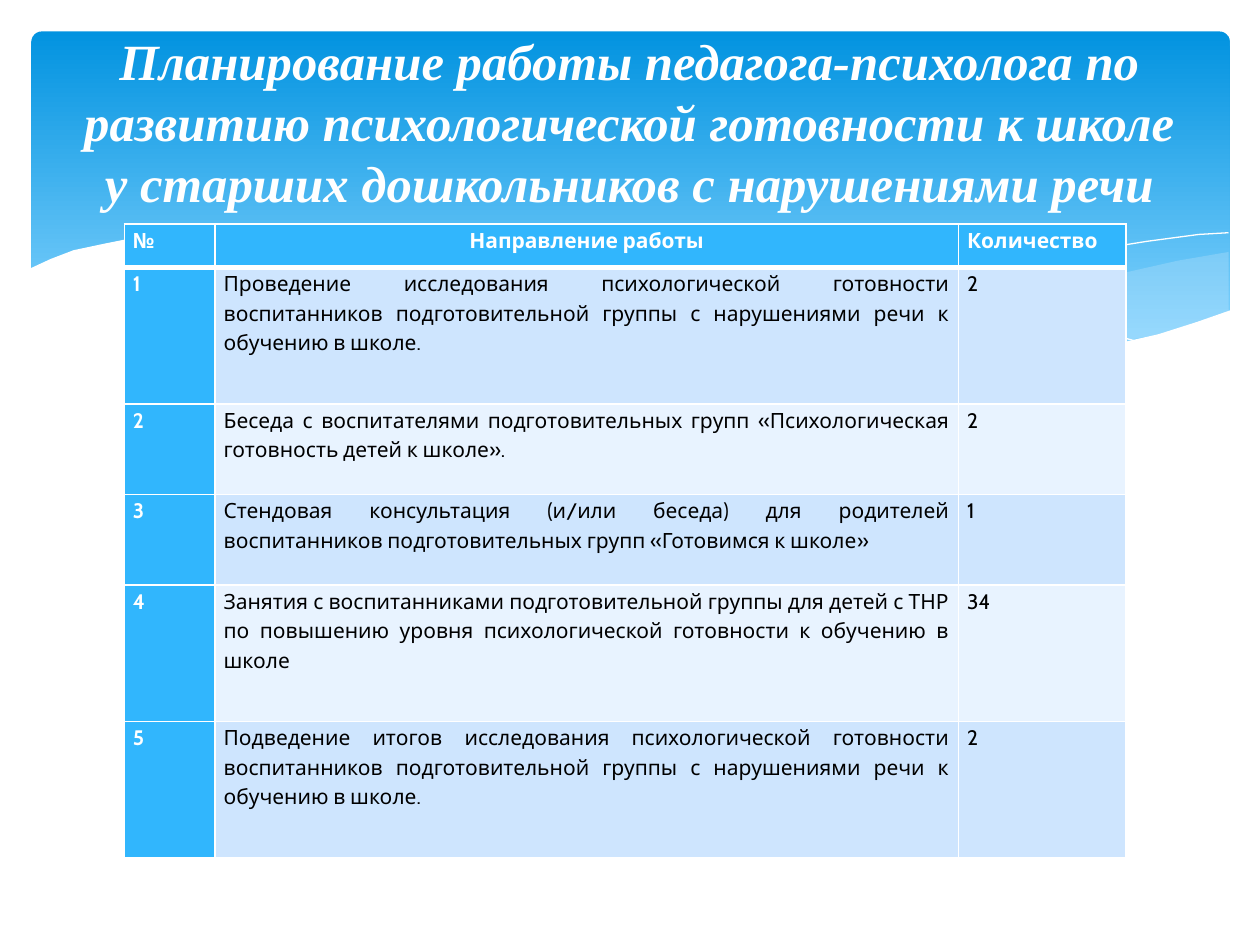
import pptx
import pptx.dml.color
import pptx.enum.shapes
import pptx.enum.text
import pptx.oxml
import pptx.oxml.ns
import pptx.util
from lxml import etree

Pt = pptx.util.Pt
ALIGN = pptx.enum.text.PP_ALIGN

COLORS = {
    "white": "FFFFFF",
    "black": "000000",
    "sky_top": "0293E0",
    "sky_bottom": "83D3FE",
    "mist": "C6E7FC",
    "accent": "31B6FD",
    "band_odd": "CEE5FE",
    "band_even": "E8F3FF",
}

TITLE = ("Планирование работы педагога-психолога по развитию психологической "
         "готовности к школе у старших дошкольников с нарушениями речи")

COLUMN_WIDTHS = [51.8, 424.9, 95.7]
ROW_HEIGHTS = [25, 78, 51.7, 51.7, 78, 78]
HEADINGS = ["№", "Направление работы", "Количество"]
ACTIVITIES = [
    ("Проведение исследования психологической готовности воспитанников "
     "подготовительной группы с нарушениями речи к обучению в школе.", "2"),
    ("Беседа с воспитателями подготовительных групп «Психологическая "
     "готовность детей к школе».", "2"),
    ("Стендовая консультация (и/или беседа) для родителей воспитанников "
     "подготовительных групп «Готовимся к школе»", "1"),
    ("Занятия с воспитанниками подготовительной группы для детей с ТНР по "
     "повышению уровня психологической готовности к обучению в школе", "34"),
    ("Подведение итогов исследования психологической готовности воспитанников "
     "подготовительной группы с нарушениями речи к обучению в школе.", "2"),
]

RIGHT_MIST = [
    (702.5, 144), (673, 149), (642, 156), (609, 163), (561, 174), (525, 182),
    (476, 191), (508, 195), (536, 198), (562, 199.5), (586, 200), (608, 199),
    (628, 197), (646, 194), (663, 191), (678, 187), (693, 181.5), (702.5, 178)]
LONG_MIST = [
    (643, 197), (603, 191), (558, 183), (508, 173), (453, 160), (420, 152),
    (390, 146), (352, 140), (318, 136), (287, 134), (260, 133), (236, 134.5),
    (206, 137.5), (246, 143), (291, 152), (323, 160), (382, 173), (433, 184),
    (480, 192), (521, 197), (557, 199.5), (589, 200), (617, 199)]
FALLING_LINE = [
    (222.5, 140.5), (242, 137.5), (261, 136), (300, 134.5), (338, 136),
    (384, 140), (438, 147), (500, 157.5), (547, 168), (598, 181), (653, 196)]
RISING_LINE = [
    (441, 185), (470, 177), (500, 169), (539, 160.5), (580, 151), (624, 143),
    (655, 138.5), (685, 134.5), (702, 133)]
WHITE_WAVE = [
    (703.5, 177), (684, 184), (662, 191), (640, 196), (612, 199), (583, 199.5),
    (548, 198), (510, 194), (467, 188.5), (417, 180), (362, 168), (322, 158),
    (281, 149), (245, 142), (210, 137), (180, 134), (152, 132.5), (116, 132.5),
    (86, 134.5), (61, 139), (42, 143), (29, 148), (16.5, 153.5), (16.5, 237),
    (703.5, 237)]


def color(name):
    return pptx.dml.color.RGBColor.from_string(COLORS[name])


def set_format(target, values):
    for name, value in values.items():
        setattr(target, name, value)


def add_sky(slide):
    sky = slide.shapes.add_shape(
        pptx.enum.shapes.MSO_SHAPE.ROUNDED_RECTANGLE,
        Pt(18), Pt(18), Pt(684.7), Pt(194.4))
    sky.adjustments[0] = 0.03
    sky.shadow.inherit = False
    sky.line.fill.background()
    sky.fill.gradient()
    sky.fill.gradient_angle = 270
    stops = [(0, "sky_top"), (0.9, "sky_bottom")]
    for stop, (position, name) in zip(sky.fill.gradient_stops, stops):
        stop.position = position
        stop.color.rgb = color(name)


def add_outline(slide, points, close):
    builder = slide.shapes.build_freeform(*points[0], scale=Pt(1))
    builder.add_line_segments(points[1:], close=close)
    outline = builder.convert_to_shape()
    outline.shadow.inherit = False
    return outline


def add_area(slide, points, fill, opacity=100):
    area = add_outline(slide, points, True)
    area.line.fill.background()
    area.fill.solid()
    area.fill.fore_color.rgb = color(fill)
    if opacity < 100:
        tint = area.fill._xPr.find(".//" + pptx.oxml.ns.qn("a:srgbClr"))
        etree.SubElement(tint, pptx.oxml.ns.qn("a:alpha"), val=str(opacity * 1000))


def add_curve(slide, points):
    curve = add_outline(slide, points, False)
    curve.fill.background()
    curve.line.color.rgb = color("white")
    curve.line.width = Pt(0)


def write(frame, text, name, paragraph_format, font_format):
    para = frame.paragraphs[0]
    set_format(para, paragraph_format)
    span = para.add_run()
    span.text = text
    set_format(span.font, font_format)
    span.font.color.rgb = color(name)


def add_title(slide):
    box = slide.shapes.add_textbox(Pt(36), Pt(17.3), Pt(648), Pt(134.6))
    set_format(box.text_frame, {
        "word_wrap": True, "margin_top": 0, "margin_bottom": 0,
        "vertical_anchor": pptx.enum.text.MSO_ANCHOR.TOP})
    write(box.text_frame, TITLE, "white", {"alignment": ALIGN.CENTER},
          {"name": "Times New Roman", "size": Pt(29), "bold": True, "italic": True})


def add_borders(cell, bottom_width):
    """Draw white borders, one point wide except for the bottom one."""
    properties = cell._tc.get_or_add_tcPr()
    widths = {"lnL": 1, "lnR": 1, "lnT": 1, "lnB": bottom_width}
    for index, (side, width) in enumerate(widths.items()):
        border = pptx.oxml.parse_xml(
            f'<a:{side} {pptx.oxml.ns.nsdecls("a")} w="{Pt(width)}"><a:solidFill>'
            f'<a:srgbClr val="{COLORS["white"]}"/></a:solidFill></a:{side}>')
        properties.insert(index, border)


def fill_cell(cell, text, row, column):
    header = row == 0
    strong = header or column == 0
    fill = "accent" if strong else "band_odd" if row % 2 else "band_even"
    cell.fill.solid()
    cell.fill.fore_color.rgb = color(fill)
    set_format(cell, {"margin_left": Pt(5), "margin_right": Pt(5),
                      "margin_top": 0, "margin_bottom": 0})
    centred = header and column == 1
    write(cell.text_frame, text, "white" if strong else "black",
          {"alignment": ALIGN.CENTER if centred else ALIGN.JUSTIFY,
           "line_spacing": 1.15, "space_after": Pt(10)},
          {"name": "Cabin", "size": Pt(12), "bold": strong})
    add_borders(cell, 3 if header else 1)


def add_plan(slide):
    rows = [HEADINGS] + [(str(number), *activity)
                         for number, activity in enumerate(ACTIVITIES, 1)]
    table = slide.shapes.add_table(
        len(rows), len(HEADINGS), Pt(71), Pt(128),
        Pt(sum(COLUMN_WIDTHS)), Pt(sum(ROW_HEIGHTS))).table
    for column, width in zip(table.columns, COLUMN_WIDTHS):
        column.width = Pt(width)
    for line, height in zip(table.rows, ROW_HEIGHTS):
        line.height = Pt(height)
    for row, texts in enumerate(rows):
        for column, text in enumerate(texts):
            fill_cell(table.cell(row, column), text, row, column)


def main():
    deck = pptx.Presentation()
    set_format(deck, {"slide_width": Pt(720), "slide_height": Pt(540)})
    slide = deck.slides.add_slide(deck.slide_layouts[6])
    add_sky(slide)
    add_area(slide, RIGHT_MIST, "mist", 29)
    add_area(slide, LONG_MIST, "mist", 40)
    add_curve(slide, FALLING_LINE)
    add_curve(slide, RISING_LINE)
    add_area(slide, WHITE_WAVE, "white")
    add_title(slide)
    add_plan(slide)
    deck.save("out.pptx")


if __name__ == "__main__":
    main()
